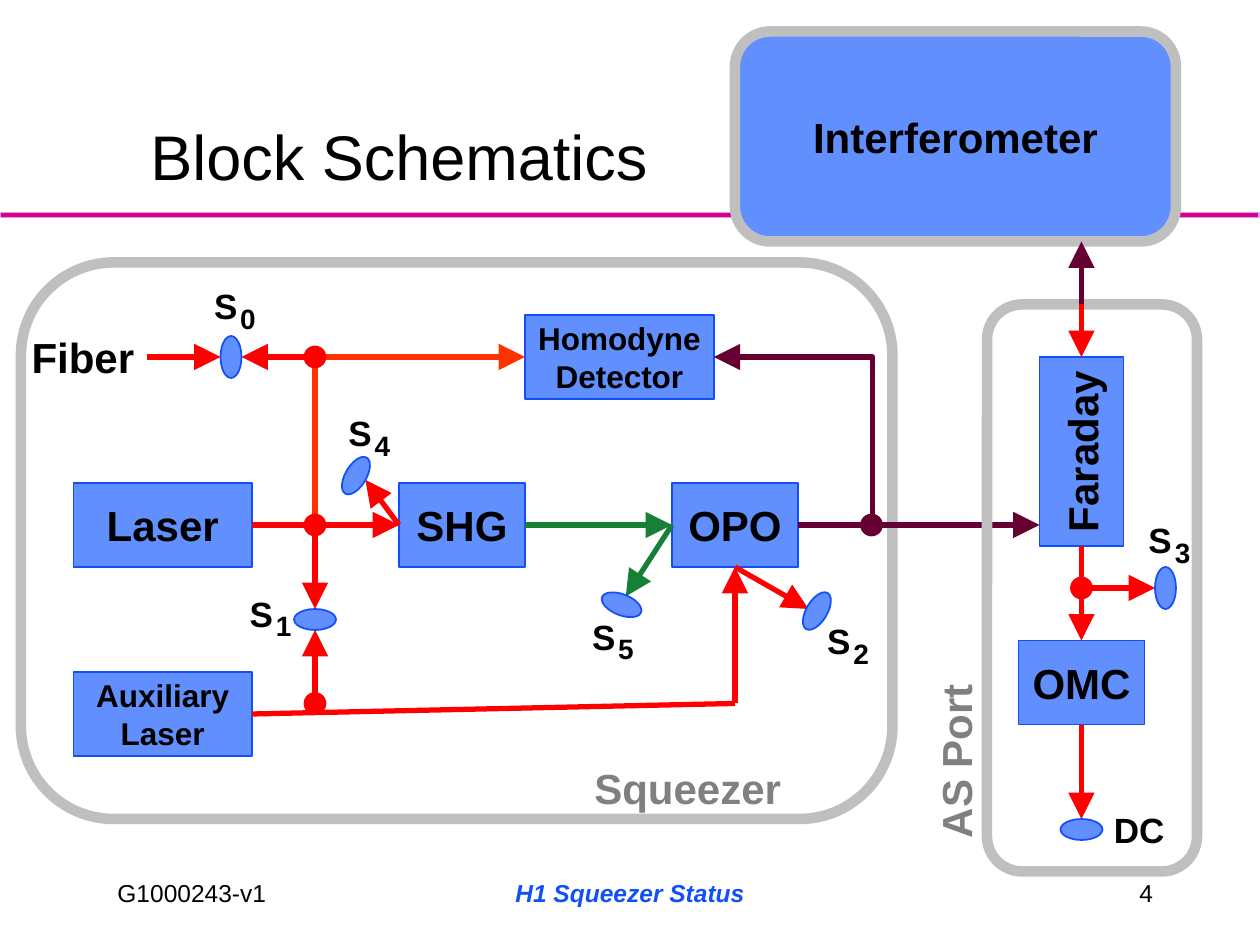
from pptx import Presentation
from pptx import util as u
from pptx.dml.color import RGBColor
from pptx.enum import shapes, text
from pptx.oxml.ns import qn
from lxml import etree

HUES = {
    "ink": "000000", "blue": "618FFD", "edge": "114FFB", "grey": "BFBFBF",
    "dim": "808080", "red": "FF0000", "orange": "FF3300", "green": "168037",
    "plum": "660033", "pink": "DC0081", "lilac": "D49FFF",
}
COLS, ROWS = 120, 90
WIDE, HIGH = u.Inches(10), u.Inches(7.5)
FORM = shapes.MSO_SHAPE
WIRE = shapes.MSO_CONNECTOR
ALIGN = text.PP_ALIGN
ANCHOR = text.MSO_ANCHOR
TOP, LEFT, BASE, RIGHT = range(4)


def hue(name):
    return RGBColor.from_string(HUES[name])


def spot(box, x, y):
    return round((box[0] + x) * WIDE / COLS), round((box[1] + y) * HIGH / ROWS)


def area(box, x, y, w, h):
    return *spot(box, x, y), *spot((0, 0), w, h)


def write(shape, words, size=24, tint="ink", bold=True, italic=False,
          align=ALIGN.CENTER, anchor=ANCHOR.MIDDLE, wrap=True):
    frame = shape.text_frame
    frame.word_wrap = wrap
    frame.vertical_anchor = anchor
    frame.text = words
    for para in frame.paragraphs:
        para.alignment = align
        for run in para.runs:
            font = run.font
            font.name, font.size = "Arial", u.Pt(size)
            font.bold, font.italic = bold, italic
            font.color.rgb = hue(tint)


def label(page, box, place, words, **form):
    note = page.shapes.add_textbox(*area(box, *place))
    write(note, words, **{"anchor": ANCHOR.TOP, **form})
    return note


def form(page, box, place, kind, fill="blue", edge="edge", width=1, turn=0):
    part = page.shapes.add_shape(kind, *area(box, *place))
    part.shadow.inherit = False
    if fill:
        part.fill.solid()
        part.fill.fore_color.rgb = hue(fill)
    else:
        part.fill.background()
    part.line.color.rgb = hue(edge)
    part.line.width = u.Pt(width)
    part.rotation = turn
    return part


def border(page, box, fill=None):
    return form(page, box, (0, 0, *box[2:]), FORM.ROUNDED_RECTANGLE, fill, "grey", 6)


def block(page, box, place, words, size=24):
    part = form(page, box, place, FORM.RECTANGLE)
    write(part, words, size)
    return part


def lens(page, box, x, y, w=4, h=2, turn=0):
    form(page, box, (x - w / 2, y - h / 2, w, h), FORM.OVAL, turn=turn)


def dot(page, box, x, y, tint="red"):
    form(page, box, (x - 1, y - 1, 2, 2), FORM.OVAL, tint, tint)


def sensor(page, box, x, y, digit):
    label(page, box, (x, y, 5, 5.3), "S", size=20)
    label(page, box, (x + 2.7, y + 1.6, 3, 4.4), digit, size=16)


def link(page, box, start, end, tint="red", head=True, bend=None):
    glued = [hasattr(side[0], "shape_id") for side in (start, end)]
    ends = [(0, 0) if glue else spot(box, *side)
            for glue, side in zip(glued, (start, end))]
    kind = WIRE.STRAIGHT if bend is None else WIRE.ELBOW
    wire = page.shapes.add_connector(kind, *ends[0], *ends[1])
    if glued[0]:
        wire.begin_connect(*start)
    if glued[1]:
        wire.end_connect(*end)
    wire.line.color.rgb = hue(tint)
    wire.line.width = u.Pt(3)
    props = wire._element.spPr
    if head:
        etree.SubElement(wire.line._get_or_add_ln(), qn("a:tailEnd"),
                         type="triangle", w="lg", len="lg")
    if bend is not None:
        etree.SubElement(props.find(qn("a:prstGeom")).get_or_add_avLst(), qn("a:gd"),
                         name="adj1", fmla=f"val {round(bend * 100000)}")
    etree.SubElement(props, qn("a:effectLst"))


def header(page, box):
    rule = form(page, box, (0, 20.25, 119.9, 0.5), FORM.RECTANGLE, "pink", "lilac", 0.75)
    title = page.shapes.title
    title.left, title.top, title.width, title.height = area(box, 6, 8, 64, 11)
    write(title, "Block Schematics", 36, bold=False, anchor=ANCHOR.BOTTOM)
    return rule


def tower(page, box):
    write(border(page, box, "blue"), "Interferometer")


def bench(page, box):
    border(page, box)
    laser = block(page, box, (5, 21, 17, 8), "Laser")
    aux = block(page, box, (5, 39, 17, 8), "Auxiliary\nLaser", 18)
    shg = block(page, box, (36, 21, 12, 8), "SHG")
    opo = block(page, box, (62, 21, 12, 8), "OPO")
    homo = block(page, box, (48, 5, 18, 8), "Homodyne\vDetector", 18)

    link(page, box, (28, 25), (homo, LEFT), "orange", bend=0)
    link(page, box, (opo, RIGHT), (homo, RIGHT), "plum", bend=-0.89)
    link(page, box, (81, 25), (97, 25), "plum")
    link(page, box, (shg, RIGHT), (opo, LEFT), "green")
    link(page, box, (opo, LEFT), (57.6, 31.8), "green")
    link(page, box, (aux, RIGHT), (68, 42), head=False)
    for start, end in (
        ((laser, RIGHT), (shg, LEFT)),
        ((68, 42), (opo, BASE)),
        ((28, 25), (28, 33)),
        ((28, 42), (28, 35)),
        ((28, 9), (21, 9)),
        ((12, 9), (19, 9)),
        ((shg, LEFT), (32.8, 20.7)),
        ((opo, BASE), (75, 33)),
    ):
        link(page, box, start, end)

    for y in (9, 25, 42):
        dot(page, box, 28, y)
    dot(page, box, 81, 25, "plum")
    lens(page, box, 20, 9, 2, 4)
    lens(page, box, 28, 34)
    lens(page, box, 57.2, 32.6, turn=21.5)
    for x, y in ((75.8, 33.2), (31.9, 20.3)):
        lens(page, box, x, y, turn=300.8)

    label(page, box, (-0.2, 6, 12.2, 6), "Fiber", wrap=False)
    label(page, box, (51, 47, 25, 6), "Squeezer", tint="dim")
    for x, y, digit in ((17, 1.5, "0"), (20.4, 30.8, "1"), (29.8, 13.6, "4"),
                        (53, 33, "5"), (75.4, 33.4, "2")):
        sensor(page, box, x, y, digit)


def port(page, box):
    border(page, box)
    fara = block(page, box, (5, 5, 8, 18), "Faraday")
    fara.text_frame._txBody.bodyPr.set("vert", "vert270")
    omc = block(page, box, (3, 32, 12, 8), "OMC")
    link(page, box, (9, 0), (fara, TOP))
    link(page, box, (9, 0), (9, -6), "plum")
    link(page, box, (fara, BASE), (omc, TOP))
    link(page, box, (omc, BASE), (9, 49))
    link(page, box, (9, 27), (16, 27))
    dot(page, box, 9, 27)
    lens(page, box, 9, 50)
    lens(page, box, 17, 27, 2, 4)
    side = label(page, box, (-15.5, 40.5, 25, 6), "AS Port", tint="dim")
    side.rotation = 270
    sensor(page, box, 14, 19.8, "3")
    label(page, box, (9.5, 47.4, 10, 5.3), "DC", size=20)


def footer(page, box):
    base = {"size": 14, "anchor": ANCHOR.MIDDLE}
    label(page, box, (10, 0, 25, 6), "G1000243-v1", bold=False, align=ALIGN.LEFT, **base)
    label(page, box, (41, 0, 38, 6), "H1 Squeezer Status", tint="edge", italic=True, **base)
    label(page, box, (86, 0, 25, 6), "4", bold=False, align=ALIGN.RIGHT, **base)


def main():
    deck = Presentation()
    deck.slide_width, deck.slide_height = WIDE, HIGH
    page = deck.slides.add_slide(deck.slide_layouts[5])
    header(page, (0, 0, COLS, 21))
    tower(page, (70, 3, 42, 20))
    bench(page, (2, 25, 83, 53))
    port(page, (94, 29, 20, 54))
    footer(page, (0, 82, COLS, 6))
    deck.save("out.pptx")


if __name__ == "__main__":
    main()
